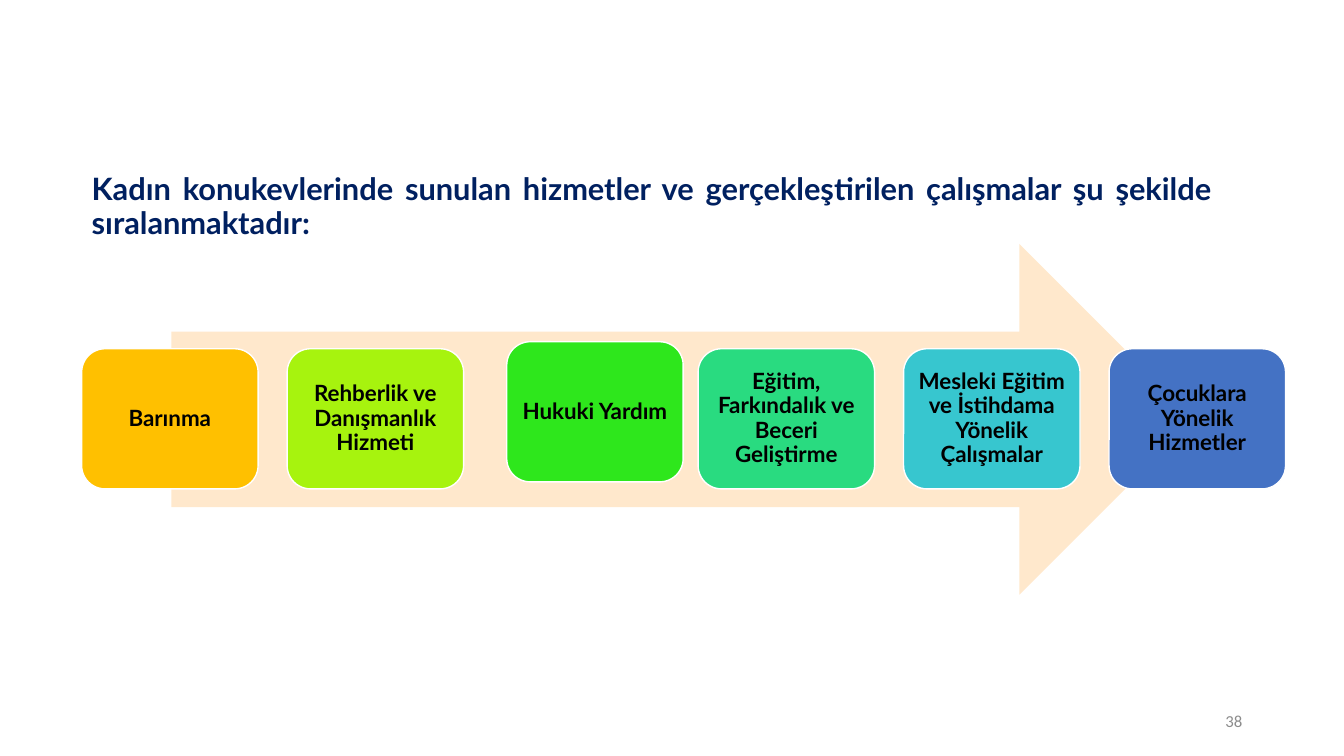
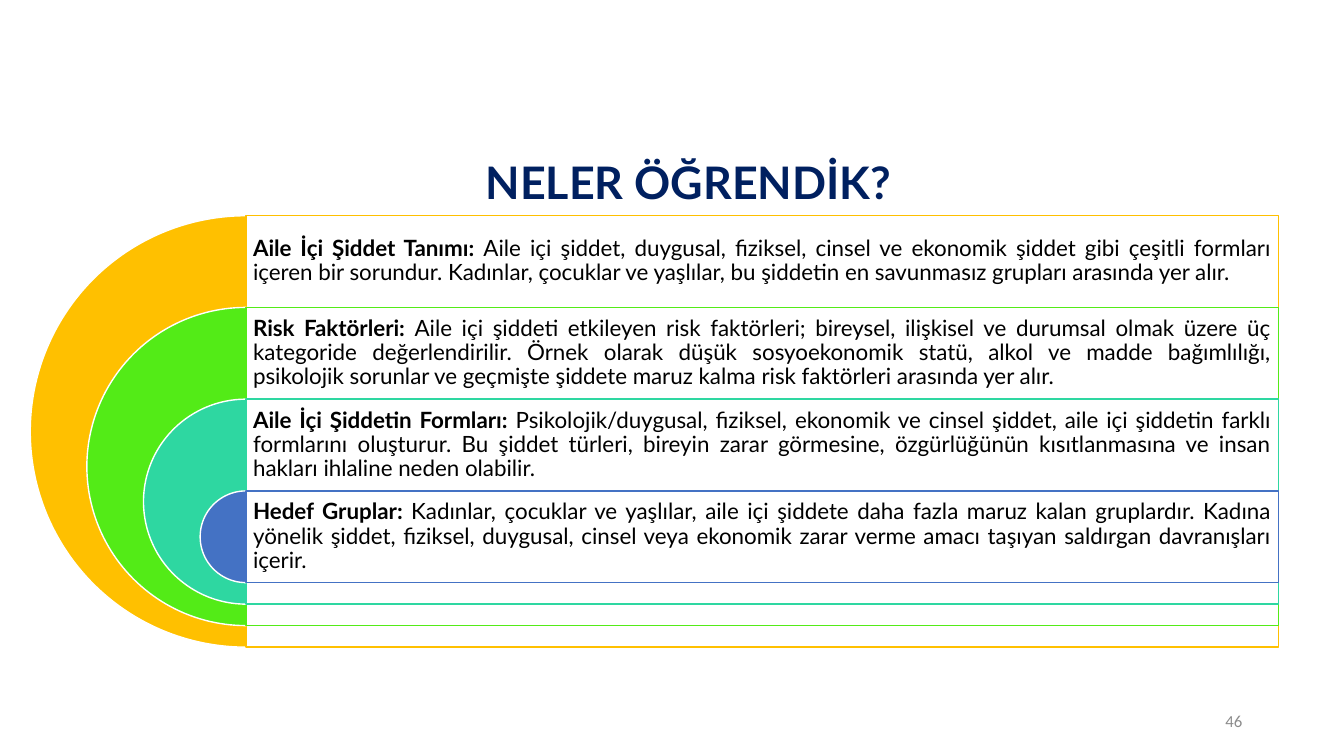
from dataclasses import dataclass

from lxml import etree
from pptx import Presentation
from pptx.dml.color import RGBColor
from pptx.enum.shapes import MSO_SHAPE as Preset
from pptx.enum.text import MSO_ANCHOR as Anchor, MSO_AUTO_SIZE as AutoSize, PP_ALIGN as Align
from pptx.oxml.ns import qn
from pptx.util import Inches, Pt


@dataclass(frozen=True)
class Theme:
    font: str = "Lato"
    number_font: str = "Calibri"
    title: str = "002060"
    text: str = "000000"
    number: str = "8C8C8C"
    white: str = "FFFFFF"
    arrow: str = "FFE8CC"
    heading_size: int = 22
    headline_size: int = 32
    body_size: int = 16
    number_size: int = 12
    line_spacing: float = 0.9
    inset: float = 0.07


THEME = Theme()

SERVICES_TITLE = ("Kadın konukevlerinde sunulan hizmetler ve gerçekleştirilen "
                  "çalışmalar şu şekilde sıralanmaktadır:")
SERVICES = [
    ("Barınma", "FFC000"),
    ("Rehberlik ve Danışmanlık Hizmeti", "A7F30E"),
    ("Hukuki Yardım", "2EE71C"),
    ("Eğitim, Farkındalık ve Beceri Geliştirme", "29DB80"),
    ("Mesleki Eğitim ve İstihdama Yönelik Çalışmalar", "37C6CF"),
    ("Çocuklara Yönelik Hizmetler", "4472C4"),
]
SHIFTED_SERVICES = {"Hukuki Yardım": (0.14, -0.07)}

LESSONS_TITLE = "NELER ÖĞRENDİK?"
LESSONS = [
    ("Aile İçi Şiddet Tanımı: ",
     "Aile içi şiddet, duygusal, fiziksel, cinsel ve ekonomik şiddet gibi çeşitli formları "
     "içeren bir sorundur. Kadınlar, çocuklar ve yaşlılar, bu şiddetin en savunmasız "
     "grupları arasında yer alır.", "FFC000"),
    ("Risk Faktörleri: ",
     "Aile içi şiddeti etkileyen risk faktörleri; bireysel, ilişkisel ve durumsal olmak üzere "
     "üç kategoride değerlendirilir. Örnek olarak düşük sosyoekonomik statü, alkol ve madde "
     "bağımlılığı, psikolojik sorunlar ve geçmişte şiddete maruz kalma risk faktörleri "
     "arasında yer alır.", "53EB17"),
    ("Aile İçi Şiddetin Formları: ",
     "Psikolojik/duygusal, fiziksel, ekonomik ve cinsel şiddet, aile içi şiddetin farklı "
     "formlarını oluşturur. Bu şiddet türleri, bireyin zarar görmesine, özgürlüğünün "
     "kısıtlanmasına ve insan hakları ihlaline neden olabilir.", "2ED7A1"),
    ("Hedef Gruplar: ",
     "Kadınlar, çocuklar ve yaşlılar, aile içi şiddete daha fazla maruz kalan gruplardır. "
     "Kadına yönelik şiddet, fiziksel, duygusal, cinsel veya ekonomik zarar verme amacı "
     "taşıyan saldırgan davranışları içerir.", "4472C4"),
]


def box(*lengths):
    return [Inches(length) for length in lengths]


def write(shape, runs, size, color, align, anchor=Anchor.MIDDLE, font=THEME.font,
          line_spacing=THEME.line_spacing):
    frame = shape.text_frame
    frame.word_wrap = True
    frame.auto_size = AutoSize.NONE
    frame.vertical_anchor = anchor
    paragraph = frame.paragraphs[0]
    paragraph.alignment = align
    paragraph.line_spacing = line_spacing
    for text, bold in runs:
        run = paragraph.add_run()
        run.text = text
        run.font.name = font
        run.font.size = Pt(size)
        run.font.bold = bold
        run.font.color.rgb = RGBColor.from_string(color)


def set_insets(shape, bottom=THEME.inset):
    frame = shape.text_frame
    frame.margin_left = frame.margin_top = frame.margin_right = Inches(THEME.inset)
    frame.margin_bottom = Inches(bottom)


def add_preset(slide, preset, position, fill, line=None):
    shape = slide.shapes.add_shape(preset, *box(*position))
    shape.shadow.inherit = False
    shape.fill.solid()
    shape.fill.fore_color.rgb = RGBColor.from_string(fill)
    if line:
        shape.line.color.rgb = RGBColor.from_string(line)
        shape.line.width = Pt(1)
    else:
        shape.line.fill.background()
    return shape


def set_opacity(shape, percent):
    color = shape.fill._xPr.find(qn("a:solidFill"))[0]
    etree.SubElement(color, qn("a:alpha")).set("val", str(percent * 1000))


def add_slide(presentation, title_text, title_position, title_size, title_align, number):
    slide = presentation.slides.add_slide(presentation.slide_layouts[5])
    title = slide.shapes.title
    title.left, title.top, title.width, title.height = box(*title_position)
    write(title, [(title_text, True)], title_size, THEME.title, title_align, Anchor.BOTTOM)
    number_box = slide.shapes.add_textbox(*box(9.42, 6.95, 3, 0.4))
    write(number_box, [(number, False)], THEME.number_size, THEME.number, Align.RIGHT,
          font=THEME.number_font, line_spacing=1.0)
    return slide


def build_services(presentation):
    slide = add_slide(presentation, SERVICES_TITLE, (0.81, 1.6, 11.31, 0.84),
                      THEME.heading_size, Align.JUSTIFY, "38")
    add_preset(slide, Preset.RIGHT_ARROW, (1.7, 2.42, 10.15, 3.48), THEME.arrow)
    first_left, last_left, top, width, height = 0.81, 11, 3.46, 1.75, 1.39
    pitch = (last_left - first_left) / (len(SERVICES) - 1)
    for index, (name, color) in enumerate(SERVICES):
        shift_x, shift_y = SHIFTED_SERVICES.get(name, (0, 0))
        position = (first_left + index * pitch + shift_x, top + shift_y, width, height)
        card = add_preset(slide, Preset.ROUNDED_RECTANGLE, position, color, THEME.white)
        set_insets(card)
        write(card, [(name, True)], THEME.body_size, THEME.text, Align.CENTER)


def build_lessons(presentation):
    slide = add_slide(presentation, LESSONS_TITLE, (1.83, 1.4, 10, 0.73),
                      THEME.headline_size, Align.CENTER, "46")
    center_x, first_top, panel_width = 2.44, 2.14, 10.24
    outer_height, band_height = 4.28, 0.91
    shrink = (outer_height - band_height) / (len(LESSONS) - 1)
    for index, (term, explanation, color) in enumerate(LESSONS):
        height = outer_height - index * shrink
        top = first_top + index * band_height
        half_disc = add_preset(slide, Preset.PIE, (center_x - height / 2, top, height, height),
                               color, THEME.white)
        half_disc.adjustments[0], half_disc.adjustments[1] = 54, 162
        panel = add_preset(slide, Preset.RECTANGLE, (center_x, top, panel_width, height),
                           THEME.white, color)
        set_opacity(panel, 90)
        set_insets(panel, bottom=height - band_height + THEME.inset)
        write(panel, [(term, True), (explanation, False)], THEME.body_size, THEME.text,
              Align.JUSTIFY)


def main():
    presentation = Presentation()
    presentation.slide_width, presentation.slide_height = box(13.33, 7.5)
    build_services(presentation)
    build_lessons(presentation)
    presentation.save("out.pptx")


if __name__ == "__main__":
    main()
